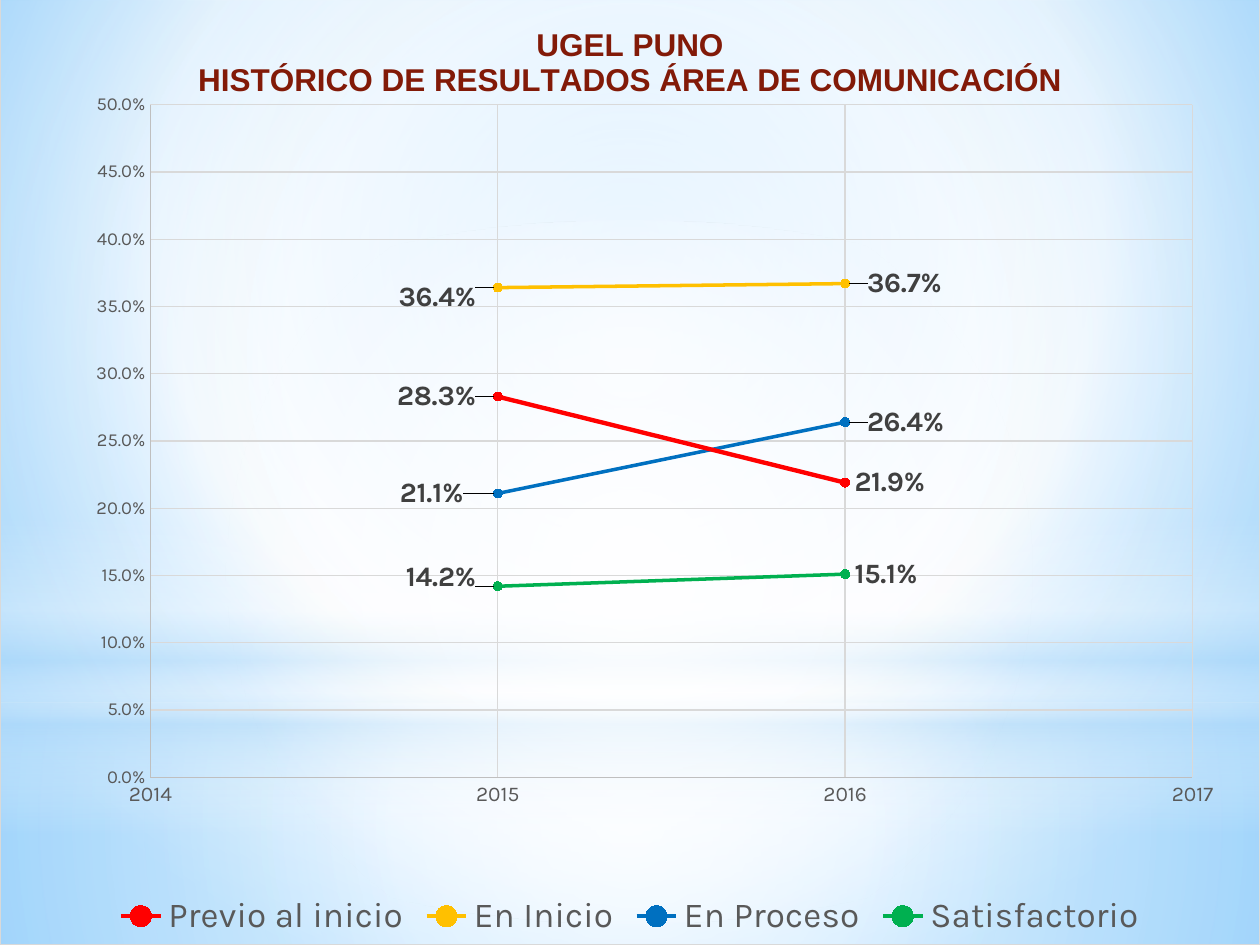
"""Build the UGEL Puno slide with the history of communication results."""
from dataclasses import dataclass

from lxml import etree
from pptx import Presentation
from pptx.chart.data import XyChartData
from pptx.dml.color import RGBColor
from pptx.enum.chart import (XL_CHART_TYPE, XL_LABEL_POSITION, XL_LEGEND_POSITION,
                             XL_MARKER_STYLE, XL_TICK_MARK)
from pptx.enum.shapes import MSO_SHAPE
from pptx.oxml import parse_xml
from pptx.oxml.ns import nsdecls, qn
from pptx.util import Cm, Pt

SMOOTH = XL_CHART_TYPE.XY_SCATTER_SMOOTH
LEFT, RIGHT = XL_LABEL_POSITION.LEFT, XL_LABEL_POSITION.RIGHT
BOTTOM = XL_LEGEND_POSITION.BOTTOM
CIRCLE = XL_MARKER_STYLE.CIRCLE
NO_TICK = XL_TICK_MARK.NONE
RECTANGLE, ELLIPSE = MSO_SHAPE.RECTANGLE, MSO_SHAPE.OVAL

WIDTH, HEIGHT = 25.4, 19.05
YEARS = (2015, 2016)
TITLE = ("UGEL PUNO", "HISTÓRICO DE RESULTADOS ÁREA DE COMUNICACIÓN")
CENTRE = (50, 50, 50, 50)


@dataclass(frozen=True)
class Theme:
    """Colours, fonts and type sizes of the slide."""
    body: str = "Karla"
    heading: str = "Arial"
    title: str = "821A08"
    text: str = "595959"
    label: str = "404040"
    grid: str = "D9D9D9"
    axis: str = "BFBFBF"
    white: str = "FFFFFF"
    haze: str = "B4DCFA"
    sky: str = "9ED5FF"
    deep: str = "5BB9FF"
    red: str = "FF0000"
    yellow: str = "FFC000"
    blue: str = "0070C0"
    green: str = "00B050"
    title_size: float = 18
    legend_size: float = 20
    label_size: float = 16
    year_size: float = 12
    percent_size: float = 10.5
    base_size: float = 10
    hairline: float = 0.75


@dataclass(frozen=True)
class Level:
    """One achievement level with its values and label shifts."""
    name: str
    color: str
    values: tuple
    shifts: tuple
    weight: float = 2


def apply(target, **values):
    """Set every given attribute on the target."""
    for name, value in values.items():
        setattr(target, name, value)


def gradient(stops, centre=None):
    """Return a circular gradient, or a vertical one without a centre."""
    fill = parse_xml(f'<a:gradFill {nsdecls("a")} rotWithShape="1"><a:gsLst/></a:gradFill>')
    for position, color, opacity in stops:
        stop = etree.SubElement(fill[0], qn("a:gs"), pos=str(position * 1000))
        paint = etree.SubElement(stop, qn("a:srgbClr"), val=color)
        etree.SubElement(paint, qn("a:alpha"), val=str(opacity * 1000))
    if centre:
        path = etree.SubElement(fill, qn("a:path"))
        path.set("path", "circle")
        sides = {side: str(part * 1000) for side, part in zip("ltrb", centre)}
        etree.SubElement(path, qn("a:fillToRect"), sides)
    else:
        etree.SubElement(fill, qn("a:lin"), ang="5400000", scaled="0")
    return fill


def manual_layout(**values):
    """Return a manual chart layout with the given values."""
    layout = parse_xml(f'<c:layout {nsdecls("c")}><c:manualLayout/></c:layout>')
    for name, value in values.items():
        etree.SubElement(layout[0], qn(f"c:{name}"), val=str(value))
    return layout


def clear_area(line):
    """Return chart area properties without fill and with the given line."""
    return parse_xml(f'<c:spPr {nsdecls("c", "a")}><a:noFill/>{line}</c:spPr>')


class SlideBuilder:
    """Holds the theme and the current slide."""

    def __init__(self, slide, theme):
        self.slide, self.theme = slide, theme

    def font(self, font, size, color, bold=False, name=None):
        """Format a font."""
        apply(font, size=Pt(size), bold=bold, name=name or self.theme.body)
        font.color.rgb = RGBColor.from_string(color)

    def line(self, line, color, weight):
        """Format a line."""
        line.color.rgb = RGBColor.from_string(color)
        line.width = Pt(weight)

    def background(self, stops, centre):
        """Fill the slide background with a gradient."""
        self.slide.background.fill.solid()
        properties = self.slide.element.find(".//" + qn("p:bgPr"))
        properties.replace(properties.find(qn("a:solidFill")), gradient(stops, centre))

    def glow(self, kind, top, height, stops, centre=None):
        """Add a full-width shape with a translucent gradient."""
        shape = self.slide.shapes.add_shape(kind, 0, Cm(top), Cm(WIDTH), Cm(height))
        shape.shadow.inherit = False
        shape.fill.solid()
        shape.line.fill.background()
        properties = shape.element.spPr
        properties.replace(properties.find(qn("a:solidFill")), gradient(stops, centre))

    def axis(self, axis, size, number_format, **scale):
        """Format a chart axis and its gridlines."""
        theme = self.theme
        apply(axis, major_tick_mark=NO_TICK, minor_tick_mark=NO_TICK,
              has_major_gridlines=True, **scale)
        apply(axis.tick_labels, number_format=number_format, number_format_is_linked=False)
        self.font(axis.tick_labels.font, size, theme.text)
        self.line(axis.format.line, theme.axis, theme.hairline)
        self.line(axis.major_gridlines.format.line, theme.grid, theme.hairline)

    def series(self, series, level):
        """Format a series, its markers and its labels."""
        color = RGBColor.from_string(level.color)
        self.line(series.format.line, level.color, level.weight)
        apply(series.marker, style=CIRCLE, size=5)
        series.marker.format.fill.solid()
        series.marker.format.fill.fore_color.rgb = color
        series.marker.format.line.color.rgb = color
        for index, position in enumerate((LEFT, RIGHT)):
            label = series.points[index].data_label
            self.font(label.font, self.theme.label_size, self.theme.label, True)
            label.position = position

    def chart(self, levels):
        """Add the chart of all levels."""
        theme = self.theme
        data = XyChartData(number_format="0.0%")
        for level in levels:
            entry = data.add_series(level.name)
            for year, value in zip(YEARS, level.values):
                entry.add_data_point(year, value)
        chart = self.slide.shapes.add_chart(
            SMOOTH, 0, Cm(-0.1), Cm(WIDTH), Cm(HEIGHT + 0.1), data).chart
        self.font(chart.font, theme.base_size, "000000")
        apply(chart, has_title=True, has_legend=True)
        frame = chart.chart_title.text_frame
        for index, line in enumerate(TITLE):
            para = frame.add_paragraph() if index else frame.paragraphs[0]
            span = para.add_run()
            span.text = line
            self.font(span.font, theme.title_size, theme.title, True, theme.heading)
        apply(chart.legend, position=BOTTOM, include_in_layout=False)
        self.font(chart.legend.font, theme.legend_size, theme.text)
        self.axis(chart.category_axis, theme.year_size, "General",
                  minimum_scale=2014, maximum_scale=2017, major_unit=1)
        self.axis(chart.value_axis, theme.percent_size, "0.0%",
                  minimum_scale=0, maximum_scale=0.5, major_unit=0.05)
        plot = chart.plots[0]
        plot.vary_by_categories = False
        for series, level in zip(plot.series, levels):
            self.series(series, level)
        self.arrange(chart.element, [shift for level in levels for shift in level.shifts])

    def arrange(self, space, shifts):
        """Place the plot and labels and clear the chart areas."""
        for label, (across, down) in zip(space.iter(qn("c:dLbl")), shifts):
            label.insert(1, manual_layout(x=across, y=down))
        area = space.find(".//" + qn("c:plotArea"))
        for layout in area.findall(qn("c:layout")):
            area.remove(layout)
        area.insert(0, manual_layout(layoutTarget="inner", xMode="edge", yMode="edge",
                                     x=0.119, y=0.115, w=0.828, h=0.709))
        area.append(clear_area("<a:ln><a:noFill/></a:ln>"))
        border = (f'<a:ln w="{Pt(self.theme.hairline)}"><a:solidFill>'
                  f'<a:srgbClr val="{self.theme.grid}"/></a:solidFill></a:ln>')
        space.find(qn("c:chart")).addnext(clear_area(border))


def main():
    """Build and save the deck."""
    theme = Theme()
    white, haze = theme.white, theme.haze
    deck = Presentation()
    apply(deck, slide_width=Cm(WIDTH), slide_height=Cm(HEIGHT))
    page = SlideBuilder(deck.slides.add_slide(deck.slide_layouts[6]), theme)
    page.background([(0, theme.sky, 100), (60, white, 100), (100, theme.deep, 100)],
                    (20, 10, 20, 60))
    page.glow(RECTANGLE, 14.17, 4.88, [(0, white, 91), (37, white, 76), (100, haze, 79)], CENTRE)
    page.glow(RECTANGLE, 0, 14.17, [(0, white, 89), (48, white, 62), (100, haze, 79)], CENTRE)
    page.glow(RECTANGLE, 10.46, 6.35, [(0, white, 0), (29, white, 30), (45, haze, 40),
                                       (55, white, 26), (65, haze, 60), (100, white, 0)])
    page.glow(ELLIPSE, 4.45, 14.17, [(0, white, 100), (56, white, 0)], CENTRE)
    page.chart([
        Level("Previo al inicio", theme.red, (0.283, 0.219), ((-0.01, 0), (0, 0)), 2.5),
        Level("En Inicio", theme.yellow, (0.364, 0.367), ((-0.01, 0.01), (0.01, 0))),
        Level("En Proceso", theme.blue, (0.211, 0.264), ((-0.02, 0), (0.01, 0))),
        Level("Satisfactorio", theme.green, (0.142, 0.151), ((-0.01, -0.01), (0, 0))),
    ])
    deck.save("out.pptx")


if __name__ == "__main__":
    main()
